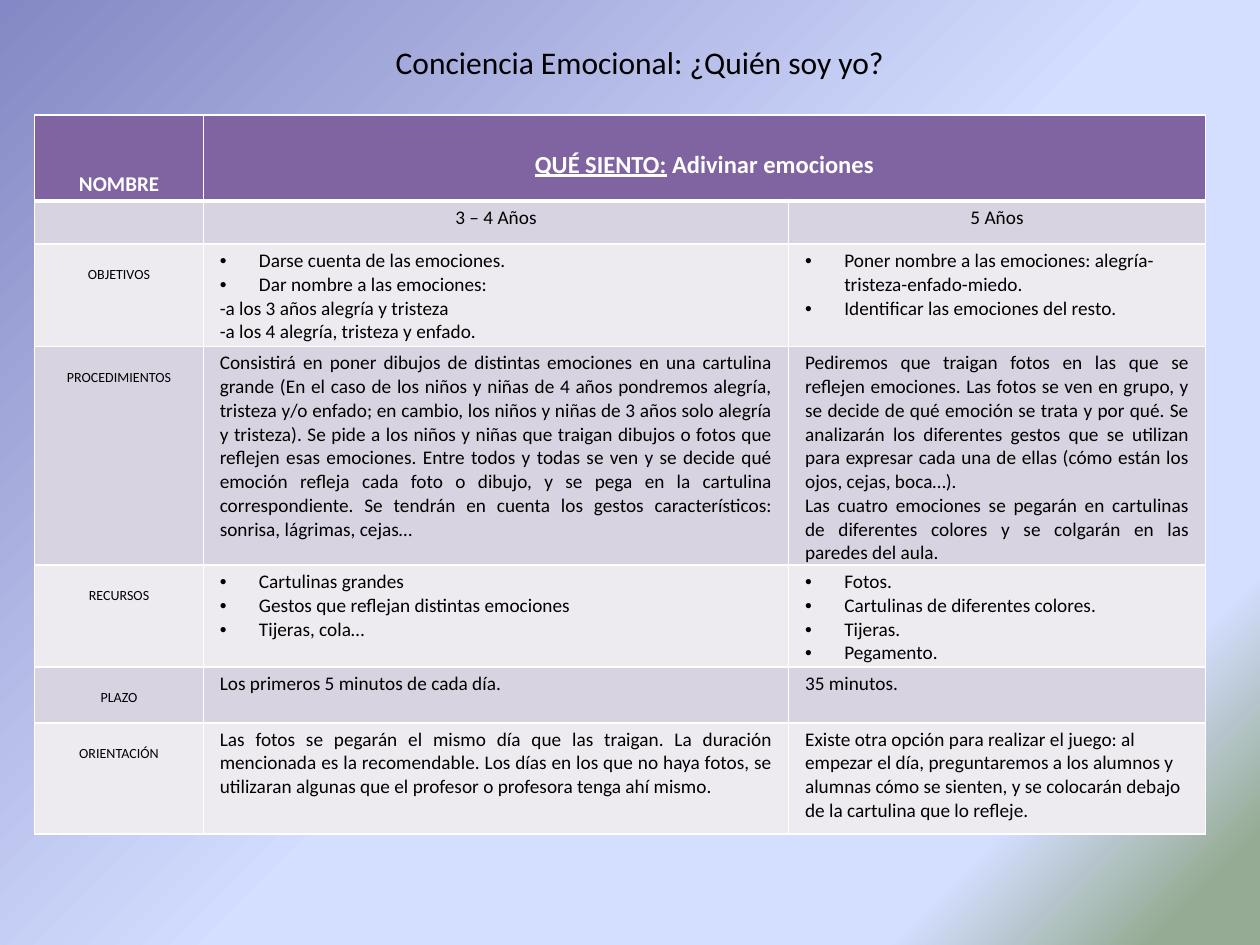
from dataclasses import dataclass

from lxml.etree import SubElement
from pptx import Presentation
from pptx.dml.color import RGBColor
from pptx.enum.text import MSO_ANCHOR, PP_ALIGN
from pptx.oxml.ns import qn
from pptx.slide import Slide
from pptx.table import Table, _Cell
from pptx.util import Cm, Inches, Pt


@dataclass(frozen=True)
class Theme:
    font: str = "Calibri"
    dark: str = "000000"
    light: str = "FFFFFF"
    head: str = "8064A2"
    bands: tuple = ("D8D3E0", "EDEAF0")
    sky: tuple = ((0, "8488C4"), (53, "D4DEFF"), (62, "D4DEFF"),
                  (83, "D4DEFF"), (95, "96AB94"))
    title: int = 18
    game: int = 14
    name: int = 12
    body: int = 11
    label: int = 8


@dataclass(frozen=True)
class Style:
    size: int
    align: PP_ALIGN = PP_ALIGN.LEFT
    color: str = "000000"
    bold: bool = False
    top: float = 0.1


@dataclass(frozen=True)
class Row:
    label: str
    height: float
    left: tuple
    right: tuple
    styles: tuple


THEME = Theme()
MID = PP_ALIGN.CENTER
NAME = Style(THEME.name, MID, THEME.light, True, 1.13)
GAME = Style(THEME.game, MID, THEME.light, True, 0.7)
AGE = Style(THEME.body, MID)
LABEL = Style(THEME.label, MID, top=0.45)
PLAIN = Style(THEME.body)
FULL = Style(THEME.body, PP_ALIGN.JUSTIFY)
BULLET = "• "
WIDTHS = (3.4, 11.8, 8.4)
HEAD = 1.73

ROWS = (
    Row("", 0.87, ("3 – 4 Años",), ("5 Años",), (AGE, AGE)),
    Row("OBJETIVOS", 2.06,
        ("• Darse cuenta de las emociones.",
         "• Dar nombre a las emociones:",
         "-a los 3 años alegría y tristeza",
         "-a los 4 alegría, tristeza y enfado."),
        ("• Poner nombre a las emociones: alegría-tristeza-enfado-miedo.",
         "• Identificar las emociones del resto."),
        (PLAIN, PLAIN)),
    Row("PROCEDIMIENTOS", 4.38,
        ("Consistirá en poner dibujos de distintas emociones en una cartulina "
         "grande (En el caso de los niños y niñas de 4 años pondremos alegría, "
         "tristeza y/o enfado; en cambio, los niños y niñas de 3 años solo "
         "alegría y tristeza). Se pide a los niños y niñas que traigan dibujos "
         "o fotos que reflejen esas emociones. Entre todos y todas se ven y se "
         "decide qué emoción refleja cada foto o dibujo, y se pega en la "
         "cartulina correspondiente. Se tendrán en cuenta los gestos "
         "característicos: sonrisa, lágrimas, cejas…",),
        ("Pediremos que traigan fotos en las que se reflejen emociones. Las "
         "fotos se ven en grupo, y se decide de qué emoción se trata y por "
         "qué. Se analizarán los diferentes gestos que se utilizan para "
         "expresar cada una de ellas (cómo están los ojos, cejas, boca…).",
         "Las cuatro emociones se pegarán en cartulinas de diferentes colores "
         "y se colgarán en las paredes del aula."),
        (FULL, FULL)),
    Row("RECURSOS", 2.05,
        ("• Cartulinas grandes",
         "• Gestos que reflejan distintas emociones",
         "• Tijeras, cola…"),
        ("• Fotos.", "• Cartulinas de diferentes colores.",
         "• Tijeras.", "• Pegamento."),
        (PLAIN, PLAIN)),
    Row("PLAZO", 1.13, ("Los primeros 5 minutos de cada día.",),
        ("35 minutos.",), (PLAIN, PLAIN)),
    Row("ORIENTACIÓN", 2.24,
        ("Las fotos se pegarán el mismo día que las traigan. La duración "
         "mencionada es la recomendable. Los días en los que no haya fotos, "
         "se utilizaran algunas que el profesor o profesora tenga ahí mismo.",),
        ("Existe otra opción para realizar el juego: al empezar el día, "
         "preguntaremos a los alumnos y alumnas cómo se sienten, y se "
         "colocarán debajo de la cartulina que lo refleje.",),
        (FULL, PLAIN)),
)


def paint_sky(slide: Slide) -> None:
    fill = slide.background.fill
    fill.gradient()
    fill.gradient_angle = 315
    stops = next(slide.background._cSld.iter(qn("a:gsLst")))
    for old in list(stops):
        stops.remove(old)
    for pos, color in THEME.sky:
        stop = SubElement(stops, qn("a:gs"), pos=str(pos * 1000))
        SubElement(stop, qn("a:srgbClr"), val=color)


def add_title(slide: Slide) -> None:
    title = slide.shapes.title
    title.left, title.top = Cm(7.7), Cm(0.74)
    title.width, title.height = Cm(10.4), Cm(1.02)
    frame = title.text_frame
    frame.text = "Conciencia Emocional: ¿Quién soy yo?"
    frame.word_wrap = False
    frame.vertical_anchor = MSO_ANCHOR.MIDDLE
    para = frame.paragraphs[0]
    para.alignment = MID
    set_font(para.font, Style(THEME.title))


def set_font(font, style: Style) -> None:
    font.name, font.size, font.bold = THEME.font, Pt(style.size), style.bold
    font.color.rgb = RGBColor.from_string(style.color)


def add_edges(cell: _Cell, base: int) -> None:
    """Draw white cell borders; base is the bottom width in points."""
    props = cell._tc.get_or_add_tcPr()
    for spot, (side, width) in enumerate(
            (("L", 1), ("R", 1), ("T", 1), ("B", base))):
        line = SubElement(props, qn(f"a:ln{side}"), w=str(Pt(width)))
        fill = SubElement(line, qn("a:solidFill"))
        SubElement(fill, qn("a:srgbClr"), val=THEME.light)
        props.insert(spot, line)


def add_bullet(para) -> None:
    props = para._p.get_or_add_pPr()
    props.set("marL", str(Cm(0.79)))
    props.set("indent", str(-Cm(0.79)))
    SubElement(props, qn("a:buFont"), typeface="Arial")
    SubElement(props, qn("a:buChar"), char=BULLET.strip())


def fill_cell(cell: _Cell, lines: tuple, style: Style, color: str,
              base: int = 1) -> None:
    cell.margin_left = cell.margin_right = Cm(0.33)
    cell.margin_top, cell.margin_bottom = Cm(style.top), 0
    cell.fill.solid()
    cell.fill.fore_color.rgb = RGBColor.from_string(color)
    add_edges(cell, base)
    frame = cell.text_frame
    frame.text = "\n".join(line.removeprefix(BULLET) for line in lines)
    for para, line in zip(frame.paragraphs, lines):
        para.alignment = style.align
        if line.startswith(BULLET):
            add_bullet(para)
        set_font(para.font, style)


def fill_head(table: Table) -> None:
    table.rows[0].height = Cm(HEAD)
    name, game, last = table.rows[0].cells
    game.merge(last)
    fill_cell(name, ("NOMBRE",), NAME, THEME.head, 3)
    fill_cell(last, (), GAME, THEME.head, 3)
    fill_cell(game, ("QUÉ SIENTO:",), GAME, THEME.head, 3)
    para = game.text_frame.paragraphs[0]
    para.runs[0].font.underline = True
    para.add_run().text = " Adivinar emociones"


def add_plan(slide: Slide) -> None:
    high = HEAD + sum(row.height for row in ROWS)
    table = slide.shapes.add_table(
        len(ROWS) + 1, len(WIDTHS), Cm(0.7), Cm(2.32),
        Cm(sum(WIDTHS)), Cm(high)).table
    for col, width in zip(table.columns, WIDTHS):
        col.width = Cm(width)
    fill_head(table)
    for spot, row in enumerate(ROWS):
        line = table.rows[spot + 1]
        line.height = Cm(row.height)
        texts = ((row.label,), row.left, row.right)
        for cell, text, style in zip(line.cells, texts, (LABEL, *row.styles)):
            fill_cell(cell, text, style, THEME.bands[spot % 2])


def main() -> None:
    deck = Presentation()
    deck.slide_width, deck.slide_height = Inches(10), Inches(7.5)
    slide = deck.slides.add_slide(deck.slide_layouts[5])
    paint_sky(slide)
    add_title(slide)
    add_plan(slide)
    deck.save("out.pptx")


if __name__ == "__main__":
    main()
